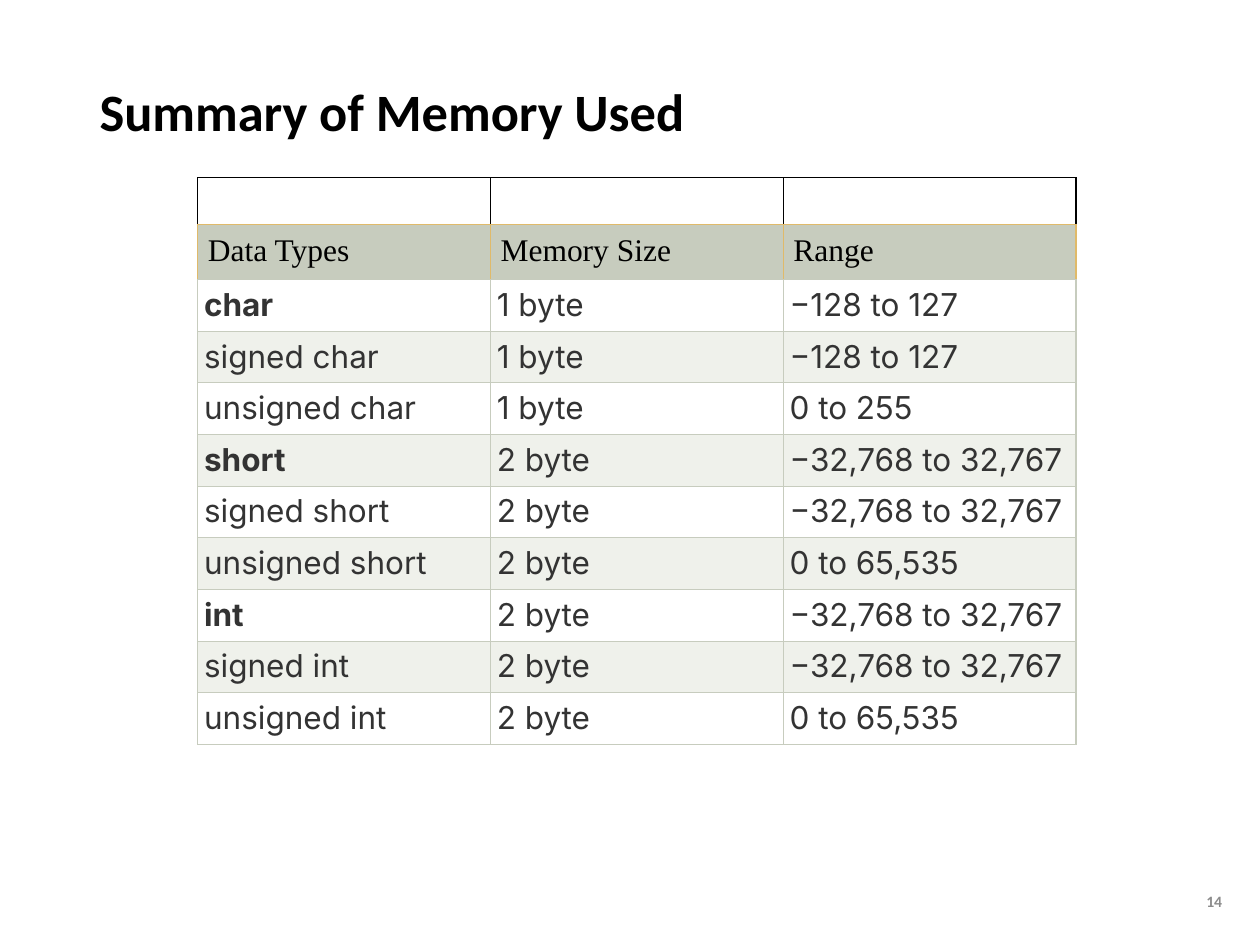
from lxml.etree import SubElement
from pptx import Presentation
from pptx.dml.color import RGBColor
from pptx.enum.text import MSO_ANCHOR as Anchor, PP_ALIGN as Align
from pptx.oxml.ns import qn
from pptx.util import Inches, Pt

BLACK = RGBColor(0x00, 0x00, 0x00)
WHITE = RGBColor(0xFF, 0xFF, 0xFF)
CHARCOAL = RGBColor(0x33, 0x33, 0x33)
GRAY = RGBColor(0x8C, 0x8C, 0x8C)
SAGE = RGBColor(0xC7, 0xCC, 0xBE)
PALE_SAGE = RGBColor(0xEF, 0xF1, 0xEB)
GOLD = RGBColor(0xE0, 0xBA, 0x6A)

HEADINGS = ("Data Types", "Memory Size", "Range")
SIGNED_16, UNSIGNED_16 = "−32,768 to 32,767", "0 to 65,535"
TYPES = (
    ("char", "1 byte", "−128 to 127", "0 to 255"),
    ("short", "2 byte", SIGNED_16, UNSIGNED_16),
    ("int", "2 byte", SIGNED_16, UNSIGNED_16),
)


class SlideBuilder:
    """Holds the fonts and the current slide, and adds each kind of element."""

    heading_font = "Calibri"
    header_font = "Times New Roman"
    body_font = "Inter"

    def __init__(self, slide):
        self.slide = slide

    def style(self, paragraph, font, size, color, bold=False, align=Align.LEFT):
        paragraph.alignment = align
        paragraph.font.name = font
        paragraph.font.size = Pt(size)
        paragraph.font.color.rgb = color
        paragraph.font.bold = bold

    def title(self, text):
        title = self.slide.shapes.title
        title.left, title.top = Inches(0.69), Inches(0.56)
        title.width, title.height = Inches(9.02), Inches(0.69)
        frame = title.text_frame
        frame.text = text
        frame.vertical_anchor = Anchor.MIDDLE
        frame.paragraphs[0].line_spacing = 0.9
        self.style(frame.paragraphs[0], self.heading_font, 30, BLACK, bold=True)

    def page_number(self, text):
        box = self.slide.shapes.add_textbox(Inches(9.31), Inches(6.95), Inches(0.39), Inches(0.4))
        frame = box.text_frame
        frame.word_wrap = True
        frame.vertical_anchor = Anchor.MIDDLE
        frame.margin_left = frame.margin_right = 0
        frame.text = text
        self.style(frame.paragraphs[0], self.heading_font, 9, GRAY, bold=True, align=Align.RIGHT)

    def cell(self, cell, text, fill, borders, inset_x=0.05, inset_y=0.05):
        cell.text = text
        cell.margin_left = cell.margin_right = Inches(inset_x)
        cell.margin_top = cell.margin_bottom = Inches(inset_y)
        properties = cell._tc.get_or_add_tcPr()
        for side, color in zip(("lnL", "lnR", "lnT", "lnB"), borders):
            line = SubElement(properties, qn(f"a:{side}"), w=str(Pt(0.75)))
            solid = SubElement(line, qn("a:solidFill"))
            SubElement(solid, qn("a:srgbClr"), val=str(color))
        if fill is None:
            cell.fill.background()
        else:
            cell.fill.solid()
            cell.fill.fore_color.rgb = fill
        return cell.text_frame.paragraphs[0]

    def memory_table(self, headings, records):
        heights = [0.37, 0.44] + [0.41] * len(records)
        table = self.slide.shapes.add_table(
            len(heights), len(headings), Inches(1.57), Inches(1.41),
            Inches(6.97), Inches(sum(heights))).table
        table.first_row = table.horz_banding = False
        for row, height in zip(table.rows, heights):
            row.height = Inches(height)
        for column, heading in enumerate(headings):
            blank = self.cell(table.cell(0, column), "", None, (BLACK, BLACK, BLACK, GOLD))
            self.style(blank, self.header_font, 12, BLACK)
            header = self.cell(table.cell(1, column), heading, SAGE,
                               (GOLD, GOLD, GOLD, SAGE), 0.08, 0.07)
            self.style(header, self.header_font, 18, BLACK)
        for index, (record, is_base) in enumerate(records):
            fill = PALE_SAGE if index % 2 else WHITE
            for column, text in enumerate(record):
                entry = self.cell(table.cell(index + 2, column), text, fill, (SAGE,) * 4)
                self.style(entry, self.body_font, 18, CHARCOAL,
                           bold=is_base and column == 0, align=Align.JUSTIFY)


def main():
    deck = Presentation()
    deck.slide_width, deck.slide_height = Inches(10), Inches(7.5)
    builder = SlideBuilder(deck.slides.add_slide(deck.slide_layouts[5]))
    records = []
    for name, size, signed_range, unsigned_range in TYPES:
        records += [
            ((name, size, signed_range), True),
            ((f"signed {name}", size, signed_range), False),
            ((f"unsigned {name}", size, unsigned_range), False),
        ]
    builder.title("Summary of Memory Used")
    builder.memory_table(HEADINGS, records)
    builder.page_number("14")
    deck.save("out.pptx")


if __name__ == "__main__":
    main()
